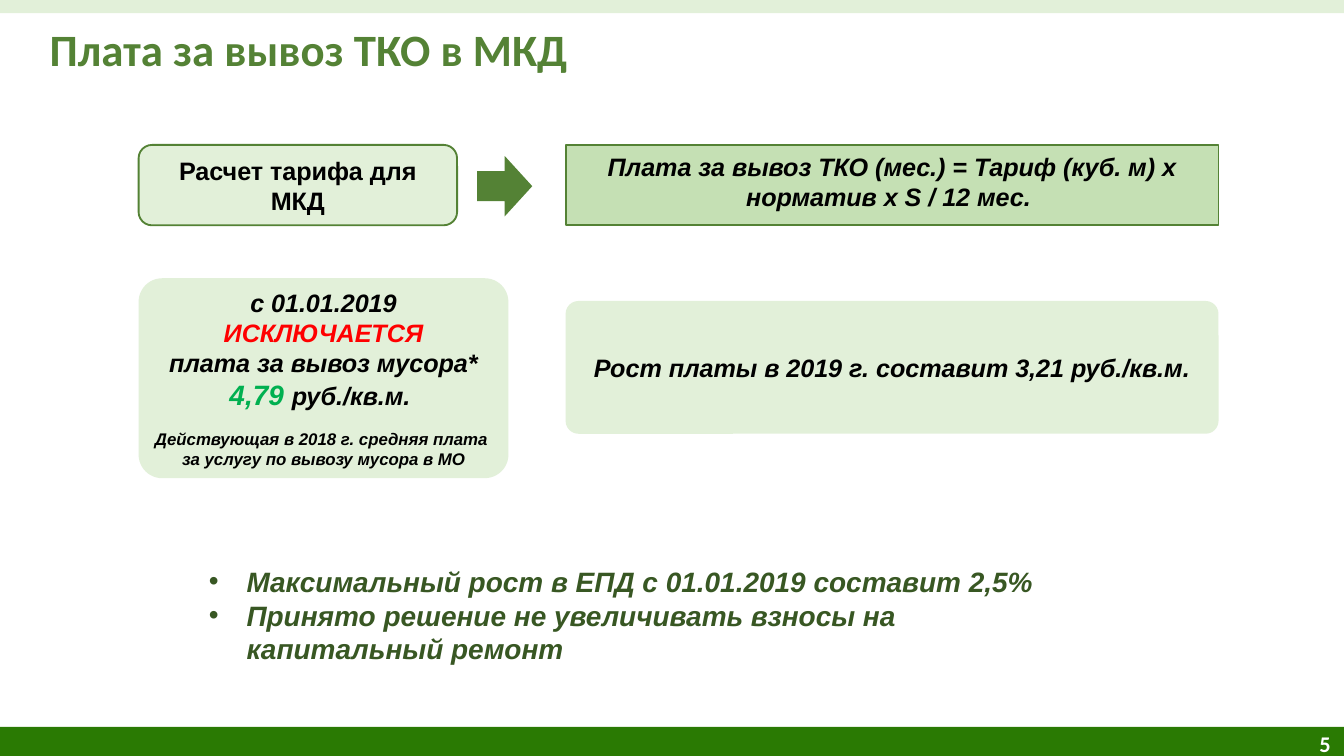
import pptx
import pptx.util
import pptx.dml.color
import pptx.enum.shapes
import pptx.enum.text
import pptx.oxml.ns
from dataclasses import dataclass
from lxml import etree

Cm = pptx.util.Cm
Pt = pptx.util.Pt
Kind = pptx.enum.shapes.MSO_SHAPE
Align = pptx.enum.text.PP_ALIGN
Anchor = pptx.enum.text.MSO_ANCHOR


@dataclass(frozen=True)
class Theme:
    pale: str = "E2F0D9"
    light: str = "C5E0B4"
    green: str = "548235"
    dark: str = "385723"
    foot: str = "2A7A03"
    black: str = "000000"
    white: str = "FFFFFF"
    red: str = "FF0000"
    price: str = "00B050"
    title: float = 24
    large: float = 15
    body: float = 13.5
    page: float = 12
    note: float = 9
    sans: str = "Arial"
    head: str = "Calibri"


T = Theme()
LEFT, RIGHT, WIDE = 2.62, 10.69, 12.34
TOP, HIGH = 2.74, 1.52


def paint(color):
    return pptx.dml.color.RGBColor.from_string(color)


def add_box(slide, kind, area, fill, line=None, round=None):
    """Add a filled shape; area is left, top, width, height in cm."""
    box = slide.shapes.add_shape(kind, *map(Cm, area))
    box.shadow.inherit = False
    box.fill.solid()
    box.fill.fore_color.rgb = paint(fill)
    if line:
        box.line.color.rgb = paint(line)
        box.line.width = Pt(1)
    else:
        box.line.fill.background()
    if round:
        box.adjustments[0] = round
    return box


def add_label(slide, area):
    return slide.shapes.add_textbox(*map(Cm, area))


def set_frame(shape, pads=(0.25, 0.13, 0.25, 0.13), anchor=Anchor.MIDDLE):
    frame = shape.text_frame
    frame.word_wrap = True
    frame.vertical_anchor = anchor
    (frame.margin_left, frame.margin_top,
     frame.margin_right, frame.margin_bottom) = map(Cm, pads)
    return frame


def add_text(frame, text, size=T.body, color=T.black, face=T.sans,
             align=Align.CENTER, slant=True):
    """Fill the first empty paragraph, or add one."""
    para = frame.paragraphs[0] if not frame.text else frame.add_paragraph()
    para.text = text
    para.alignment = align
    font = para.font
    font.name, font.size = face, Pt(size)
    font.bold, font.italic = True, slant
    font.color.rgb = paint(color)
    return para


def add_dot(para):
    """Give the paragraph a bullet with a hanging indent."""
    props = para._p.get_or_add_pPr()
    props.set("marL", str(Cm(0.71)))
    props.set("indent", str(-Cm(0.71)))
    qn = pptx.oxml.ns.qn
    face = etree.Element(qn("a:buFont"), typeface=T.sans)
    dot = etree.Element(qn("a:buChar"), char="•")
    props.insert(0, face)
    props.insert(1, dot)


def add_bands(slide):
    add_box(slide, Kind.RECTANGLE, (0, 13.74, 25.4, 0.55), T.foot)
    add_box(slide, Kind.RECTANGLE, (0, 0, 25.4, 0.25), T.pale)
    page = set_frame(add_label(slide, (18.97, 13.54, 6.43, 1.02)))
    add_text(page, "5", T.page, T.white, T.head, Align.RIGHT, False)
    title = set_frame(add_label(slide, (0.94, 0.53, 23.98, 0.91)),
                      (0, 0, 0, 0), Anchor.TOP)
    para = add_text(title, "Плата за вывоз ТКО в МКД", T.title, T.green,
                    T.head, Align.LEFT, False)
    para.line_spacing = 0.9


def add_rule(slide):
    topic = add_box(slide, Kind.ROUNDED_RECTANGLE, (LEFT, TOP, 6.02, HIGH),
                    T.pale, T.green)
    add_text(set_frame(topic), "Расчет тарифа для МКД", slant=False)
    add_box(slide, Kind.RIGHT_ARROW, (9.02, 2.95, 1.04, 1.14), T.green)
    rule = add_box(slide, Kind.RECTANGLE, (RIGHT, TOP, WIDE, HIGH),
                   T.light, T.green)
    para = add_text(set_frame(rule, (0, 0, 0, 0.15)),
                    "Плата за вывоз ТКО (мес.) = Тариф (куб. м) х "
                    "норматив х S / 12 мес. ")
    para.space_before = Pt(4.3)


def add_cards(slide):
    pads = (0, 0.1, 0, 0.1)
    fee = add_box(slide, Kind.ROUNDED_RECTANGLE, (LEFT, 5.26, 6.99, 3.78),
                  T.pale, round=0.118)
    frame = set_frame(fee, pads)
    add_text(frame, "с 01.01.2019")
    add_text(frame, "ИСКЛЮЧАЕТСЯ", color=T.red)
    para = add_text(frame, "плата за вывоз мусора* ")
    price = para.add_run()
    price.text = "4,79 "
    price.font.size = Pt(T.large)
    price.font.color.rgb = paint(T.price)
    para.add_run().text = "руб./кв.м. "
    note = add_text(frame, "Действующая в 2018 г. средняя плата \v"
                    "за услугу по вывозу мусора в МО", T.note)
    note.space_before = Pt(9.2)

    rise = add_box(slide, Kind.ROUNDED_RECTANGLE, (RIGHT, 5.69, WIDE, 2.51),
                   T.pale, round=0.097)
    add_text(set_frame(rise, pads),
             "Рост платы в 2019 г. составит 3,21 руб./кв.м.")


def add_points(slide):
    frame = set_frame(add_label(slide, (3.71, 10.57, 17.09, 2.16)),
                      (0.24, 0.1, 0.24, 0.1), Anchor.TOP)
    for text, align in (
        ("Максимальный рост в ЕПД с 01.01.2019 составит 2,5%", Align.JUSTIFY),
        ("Принято решение не увеличивать взносы на капитальный ремонт",
         Align.LEFT),
    ):
        add_dot(add_text(frame, text, T.large, T.dark, align=align))


def main():
    deck = pptx.Presentation()
    deck.slide_width, deck.slide_height = Cm(25.4), Cm(14.29)
    slide = deck.slides.add_slide(deck.slide_layouts[6])
    # Header, footer and title
    add_bands(slide)
    # Tariff formula
    add_rule(slide)
    # Fee that ends and the rise that follows
    add_cards(slide)
    # Conclusions
    add_points(slide)
    deck.save("out.pptx")


if __name__ == "__main__":
    main()
